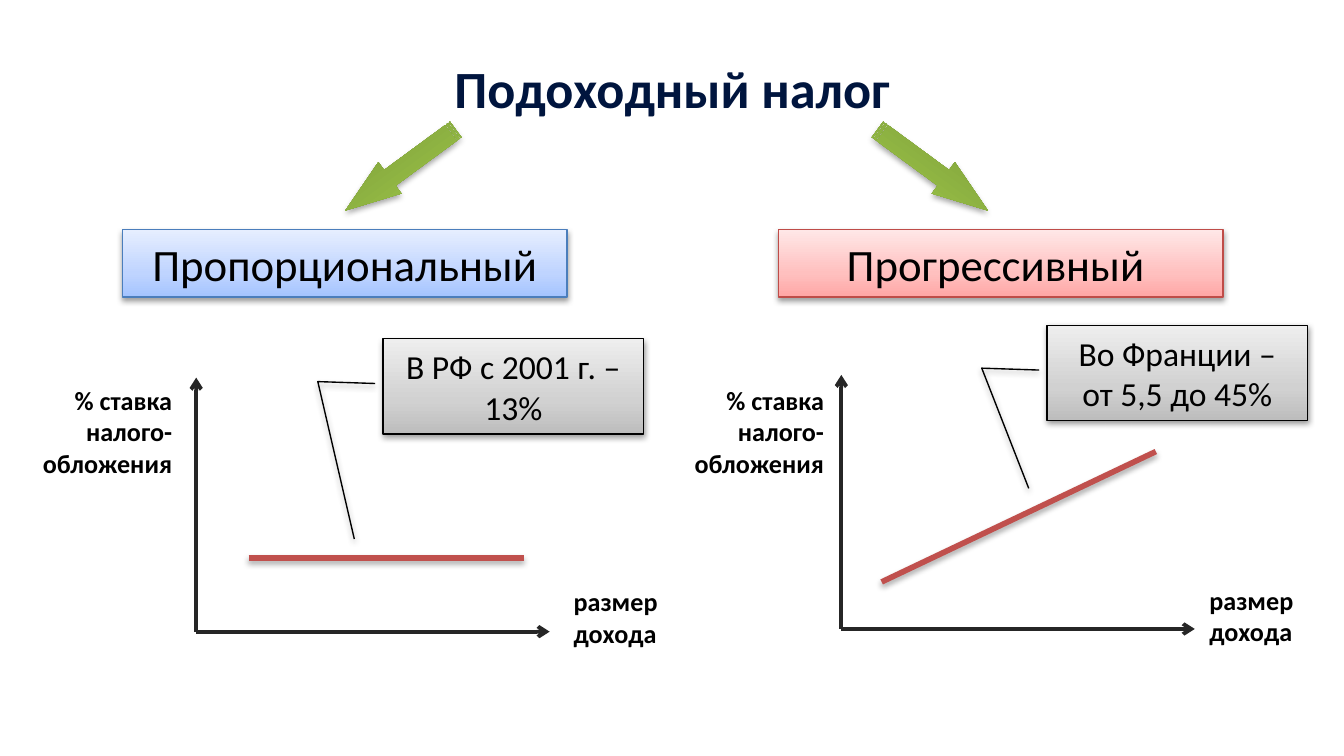
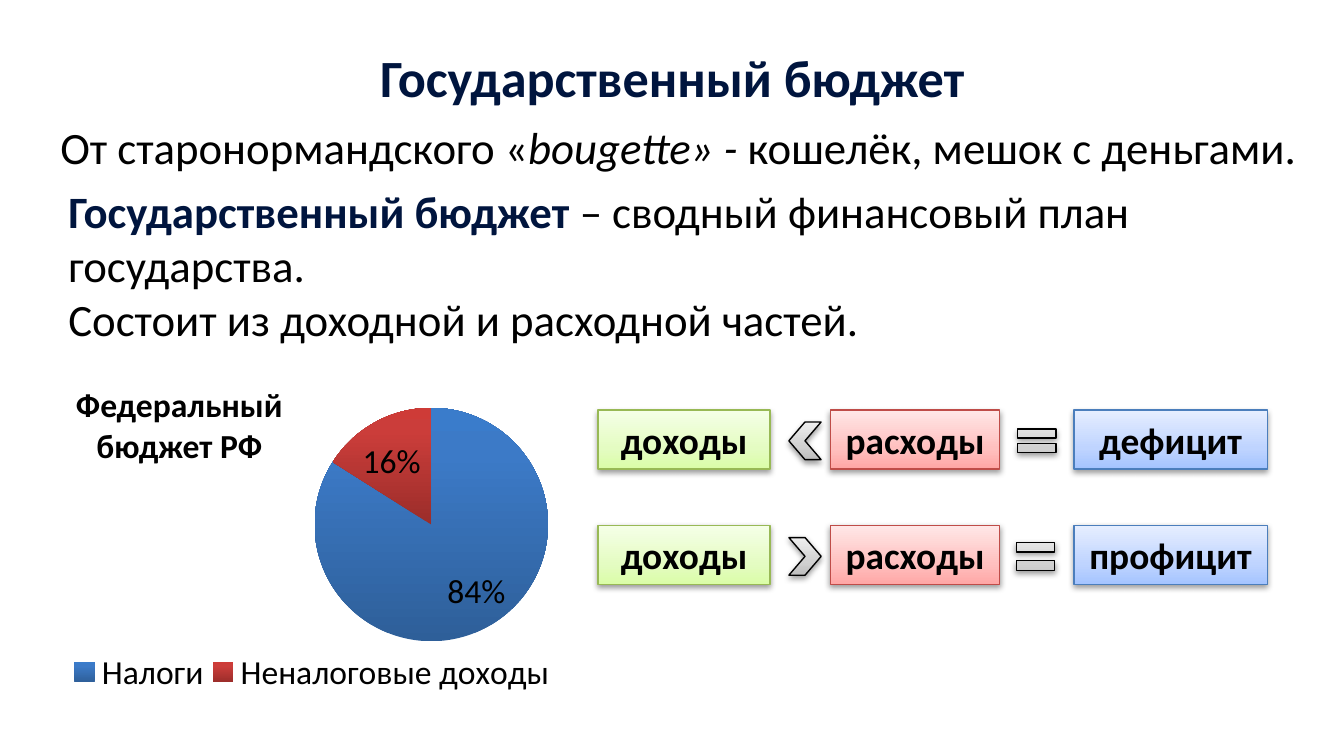
from pptx import Presentation
from pptx.chart.data import CategoryChartData
from pptx.dml.color import RGBColor
from pptx.enum.chart import XL_CHART_TYPE, XL_LABEL_POSITION, XL_LEGEND_POSITION
from pptx.enum.shapes import MSO_CONNECTOR, MSO_SHAPE
from pptx.enum.text import MSO_ANCHOR, PP_ALIGN
from pptx.oxml import parse_xml
from pptx.oxml.ns import nsdecls, qn
from pptx.util import Inches, Pt

FONT, NAVY, BLACK, DARK, RED = "Calibri", "00153E", "000000", "262626", "C0504D"
LEFT, MID, RIGHT = PP_ALIGN.LEFT, PP_ALIGN.CENTER, PP_ALIGN.RIGHT
TONES = {
    "blue": ([(0, "A4C4FF"), (35, "BFD4FF"), (100, "E6EEFF")], "4B7EBC"),
    "red": ([(0, "FFA6A5"), (35, "FFC0BF"), (100, "FFE7E7")], "BF4C48"),
    "lime": ([(0, "DAFDA7"), (35, "E4FCC2"), (100, "F5FFE7")], "98B955"),
    "grey": ([(0, "BDBDBD"), (35, "D1D1D1"), (100, "EEEEEE")], BLACK),
    "green": ([(0, "779737"), (80, "9BC348"), (100, "9DC746")], None),
}

TITLES = [("Подоходный налог", 0.37), ("Государственный бюджет", 0.29)]
RATE, SIZE = "% ставка налого-обложения", "размер дохода"
ARROWS = [(2.47, 143.7, False), (6.43, 216.3, True)]
TAXES = [
    dict(name="Пропорциональный", tone="blue", left=0.91, axis=(1.46, 4.7),
         rate=0.2, size=(4.17, 4.31), line=(1.85, 4.15, 3.9, 4.15),
         note="В РФ с 2001 г. – 13%", spot=(2.85, 2.52), tip=(2.1, -0.11)),
    dict(name="Прогрессивный ", tone="red", left=5.79, axis=(6.26, 4.68),
         rate=5.05, size=(8.9, 4.3), line=(6.56, 4.33, 8.6, 3.36),
         note="Во Франции – от 5,5 до 45%", spot=(7.79, 2.42), tip=(1.71, -0.07)),
]
ORIGIN = [("От старонормандского «", {}), ("bougette» - ", {"italic": True}),
          ("кошелёк, мешок с деньгами.", {})]
MEANING = [("Государственный бюджет ", {"bold": True, "color": NAVY}),
           ("– сводный финансовый план государства.", {})]
PARTS = "Состоит из доходной и расходной частей."
BUDGET = "Федеральный бюджет РФ"
SHARES = [
    ("Налоги", 84, [(0, "2E5F99"), (80, "3C7AC7"), (100, "3A7CCB")], (0.04, -0.02)),
    ("Неналоговые доходы", 16, [(0, "9B2D2A"), (80, "CB3D3A"), (100, "CE3B37")],
     (-0.03, 0.03)),
]
COLS = [(4.45, 1.28, "lime"), (6.18, 1.26, "red"), (7.99, 1.44, "blue")]
SUMS = [
    (3.05, ("доходы", "расходы", "дефицит"), True, 7.52, (0.18, 0.12)),
    (3.91, ("доходы", "расходы", "профицит"), False, 7.51, (0.2, 0.18)),
]


def color(code):
    return RGBColor.from_string(code)


def blend(fill, root, stops):
    fill.gradient()
    fill.gradient_angle = 90
    group = list(root.iter(qn("a:gsLst")))[-1]
    for stop in list(group):
        group.remove(stop)
    for pos, code in stops:
        group.append(parse_xml(
            f'<a:gs {nsdecls("a")} pos="{pos * 1000}"><a:srgbClr val="{code}"/></a:gs>'))


def shade(props, alpha, gap):
    for old in props.findall(qn("a:effectLst")):
        props.remove(old)
    drop = ""
    if alpha:
        drop = (f'<a:outerShdw blurRad="40000" dist="{gap}" dir="5400000" rotWithShape="0">'
                f'<a:srgbClr val="000000"><a:alpha val="{alpha * 1000}"/></a:srgbClr></a:outerShdw>')
    props.append(parse_xml(f'<a:effectLst {nsdecls("a")}>{drop}</a:effectLst>'))


def style(para, size, bold=False, code=BLACK, align=LEFT):
    para.alignment = align
    font = para.font
    font.name, font.size, font.bold = FONT, Pt(size), bold
    font.color.rgb = color(code)


def text(slide, box, words, size, bold=False, code=BLACK, align=LEFT):
    frame = slide.shapes.add_textbox(*map(Inches, box)).text_frame
    frame.word_wrap = True
    frame.text = words
    style(frame.paragraphs[0], size, bold, code, align)
    return frame


def rich(para, runs):
    for words, look in runs:
        run = para.add_run()
        run.text = words
        run.font.bold = look.get("bold", False)
        run.font.italic = look.get("italic", False)
        run.font.color.rgb = color(look.get("color", BLACK))


def block(slide, kind, box, tone, words="", size=18, bold=False, adj=(), flip=False):
    shape = slide.shapes.add_shape(kind, *map(Inches, box))
    for i, value in enumerate(adj):
        shape.adjustments[i] = value
    stops, edge = TONES[tone]
    blend(shape.fill, shape.element, stops)
    if edge:
        shape.line.color.rgb = color(edge)
        shape.line.width = Pt(0.75)
    else:
        shape.line.fill.background()
    props = shape.element.spPr
    shade(props, 38 if edge else 35, 20000 if edge else 23000)
    if flip:
        props.find(qn("a:xfrm")).set("flipH", "1")
    if words:
        frame = shape.text_frame
        frame.word_wrap = True
        frame.vertical_anchor = MSO_ANCHOR.MIDDLE
        frame.text = words
        style(frame.paragraphs[0], size, bold, align=MID)
    return shape


def stroke(shapes, ends, code, width, head=False, alpha=0):
    line = shapes.add_connector(MSO_CONNECTOR.STRAIGHT, *map(Inches, ends))
    line.line.color.rgb = color(code)
    line.line.width = Pt(width)
    props = line.element.spPr
    if head:
        props.find(qn("a:ln")).append(
            parse_xml(f'<a:tailEnd {nsdecls("a")} type="arrow"/>'))
    shade(props, alpha, 23000)


def page(deck, title, top):
    slide = deck.slides.add_slide(deck.slide_layouts[6])
    text(slide, (2.64, top, 4.72, 0.57), title, 28, True, NAVY, MID)
    return slide


def taxes(slide):
    for left, turn, flip in ARROWS:
        arrow = block(slide, MSO_SHAPE.STRIPED_RIGHT_ARROW, (left, 1.12, 1.02, 0.29),
                      "green", adj=(0.5, 1.42), flip=flip)
        arrow.rotation = turn
    for tax in TAXES:
        block(slide, MSO_SHAPE.RECTANGLE, (tax["left"], 1.71, 3.31, 0.5),
              tax["tone"], tax["name"], 24)
        x, y = tax["axis"]
        axes = slide.shapes.add_group_shape().shapes
        for end in ((x, y - 1.89), (x + 2.63, y)):
            stroke(axes, (x, y, *end), DARK, 2, head=True)
        text(slide, (tax["rate"], 2.81, 1.18, 0.81), RATE, 14, True, align=RIGHT)
        text(slide, (*tax["size"], 0.84, 0.57), SIZE, 14, True)
        stroke(slide.shapes, tax["line"], RED, 3, alpha=35)
        block(slide, MSO_SHAPE.LINE_CALLOUT_2, (*tax["spot"], 1.94, 0.71), "grey",
              tax["note"], adj=(0.47, -0.03, 0.45, -0.25, *tax["tip"]))


def place(item, x, y, w, h, inner=False):
    target = '<c:layoutTarget val="inner"/>' if inner else ""
    spots = "".join(f'<c:{k}Mode val="edge"/>' for k in "xy")
    spots += "".join(f'<c:{k} val="{v}"/>' for k, v in zip("xywh", (x, y, w, h)))
    for old in item.findall(qn("c:layout")):
        item.remove(old)
    node = parse_xml(f'<c:layout {nsdecls("c")}><c:manualLayout>{target}{spots}'
                     '</c:manualLayout></c:layout>')
    item.insert(0 if inner else 1, node)


def shift(tags, i, x, y):
    flags = "".join(f'<c:show{k} val="{int(k == "Percent")}"/>' for k in
                    ("LegendKey", "Val", "CatName", "SerName", "Percent", "BubbleSize"))
    tags.insert(i, parse_xml(
        f'<c:dLbl {nsdecls("c")}><c:idx val="{i}"/><c:layout><c:manualLayout>'
        f'<c:x val="{x}"/><c:y val="{y}"/></c:manualLayout></c:layout>'
        f'<c:numFmt formatCode="0%" sourceLinked="0"/><c:dLblPos val="inEnd"/>{flags}</c:dLbl>'))


def pie(slide):
    data = CategoryChartData()
    data.categories = [share[0] for share in SHARES]
    data.add_series("Series 1", [share[1] for share in SHARES])
    box = map(Inches, (0.2, 2.33, 4.04, 2.97))
    chart = slide.shapes.add_chart(XL_CHART_TYPE.PIE, *box, data).chart
    chart.has_title = False
    chart.font.name, chart.font.size = FONT, Pt(18)
    chart.font.color.rgb = color(BLACK)
    chart.has_legend = True
    chart.legend.position = XL_LEGEND_POSITION.TOP
    chart.legend.include_in_layout = False
    plot = chart.plots[0]
    plot.vary_by_categories = True
    row = plot.series[0]
    tags = row.data_labels
    tags.show_percentage, tags.show_value = True, False
    tags.number_format, tags.number_format_is_linked = "0%", False
    tags.position = XL_LABEL_POSITION.INSIDE_END
    root = chart.element
    labels = next(root.iter(qn("c:ser"))).find(qn("c:dLbls"))
    for i, (_, _, stops, move) in enumerate(SHARES):
        blend(row.points[i].format.fill, root, stops)
        shift(labels, i, *move)
    place(next(root.iter(qn("c:plotArea"))), 0.53, 0.1, 0.43, 0.86, True)
    place(next(root.iter(qn("c:legend"))), 0.07, 0.83, 0.91, 0.14)


def budget(slide):
    first = text(slide, (0.35, 0.84, 9.45, 0.5), "", 24)
    rich(first.paragraphs[0], ORIGIN)
    body = text(slide, (0.41, 1.32, 9.29, 1.31), "", 24)
    rich(body.paragraphs[0], MEANING)
    last = body.add_paragraph()
    last.text = PARTS
    style(last, 24)
    pie(slide)
    text(slide, (0.35, 2.81, 1.97, 0.71), BUDGET, 18, True, align=MID)
    for top, words, less, left, adj in SUMS:
        for (x, width, tone), word in zip(COLS, words):
            block(slide, MSO_SHAPE.RECTANGLE, (x, top, width, 0.44), tone, word, 20, True)
        block(slide, MSO_SHAPE.CHEVRON, (5.87, top + 0.09, 0.24, 0.28), "grey", flip=less)
        block(slide, MSO_SHAPE.MATH_EQUAL, (left, top + 0.05, 0.39, 0.36), "grey", adj=adj)


def main():
    deck = Presentation()
    deck.slide_width, deck.slide_height = Inches(10), Inches(10) * 9 // 16
    for (title, top), draw in zip(TITLES, (taxes, budget)):
        draw(page(deck, title, top))
    deck.save("out.pptx")


if __name__ == "__main__":
    main()
